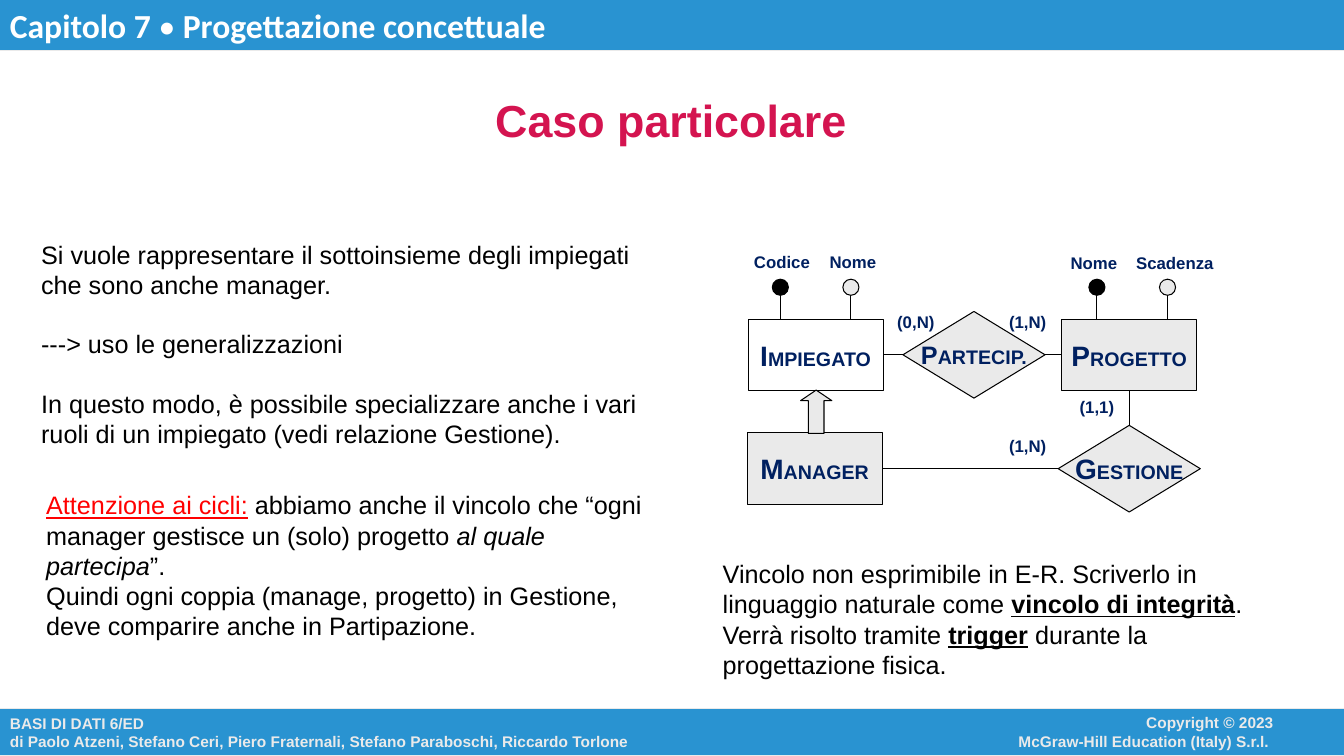
from pptx import Presentation
from pptx.dml.color import RGBColor
from pptx.enum.shapes import MSO_CONNECTOR, MSO_SHAPE
from pptx.enum.text import MSO_ANCHOR, PP_ALIGN
from pptx.oxml.ns import qn
from pptx.util import Inches, Pt
from lxml.etree import SubElement

THEME = {
    "blue": "2993D1", "gray": "EAEAEA", "white": "FFFFFF", "black": "000000",
    "navy": "002060", "pink": "D41450", "red": "FF0000",
    "body": 18, "title": 32, "header": 24, "footer": 11,
    "label": 12, "initial": 20, "small": 18, "caps": 14,
    "line": 0.75, "gap": 21, "font": "Arial", "head_font": "Calibri",
}

HEADER = [[("Capitolo 7 ", "b"), ("•", ""), (" Progettazione concettuale", "b")]]
TITLE = [[("Caso particolare", "b")]]
AUTHORS = [
    [("BASI DI DATI 6/ED", "b")],
    [("di Paolo Atzeni, Stefano Ceri, Piero Fraternali, Stefano Paraboschi, Riccardo Torlone", "b")],
]
RIGHTS = [
    [("Copyright © 2023", "b")],
    [("McGraw-Hill Education (Italy) S.r.l. ", "b")],
]
INTRO = [
    [("Si vuole rappresentare il sottoinsieme degli impiegati che sono anche manager.", "")],
    [("---> uso le generalizzazioni", "")],
    [("In questo modo, è possibile specializzare anche i vari ruoli di un impiegato (vedi relazione Gestione).", "")],
]
CYCLES = [
    [("Attenzione ai cicli:", "ur"),
     (" abbiamo anche il vincolo che “ogni manager gestisce un (solo) progetto ", ""),
     ("al quale partecipa", "i"), ("”.", "")],
    [("Quindi ogni coppia (manage, progetto) in Gestione, deve comparire anche in Partipazione.", "")],
]
RULE = [
    [("Vincolo non esprimibile in E-R. Scriverlo in linguaggio naturale come ", ""),
     ("vincolo di integrità", "bu"), (".", "")],
    [("Verrà risolto tramite ", ""), ("trigger", "bu"),
     (" durante la progettazione fisica.", "")],
]

BOX, RHOMB = (1.34, 0.71), (1.41, 0.86)
UPPER, LOWER = 3.52, 4.65
NODES = {
    "IMPIEGATO": (MSO_SHAPE.RECTANGLE, 8.09, UPPER, BOX, None, "initial"),
    "PROGETTO": (MSO_SHAPE.RECTANGLE, 11.2, UPPER, BOX, "gray", "initial"),
    "MANAGER": (MSO_SHAPE.RECTANGLE, 8.08, LOWER, BOX, "gray", "initial"),
    "PARTECIP.": (MSO_SHAPE.DIAMOND, 9.66, UPPER, RHOMB, "gray", "small"),
    "GESTIONE": (MSO_SHAPE.DIAMOND, 11.2, LOWER, RHOMB, "gray", "initial"),
}
TOP, LEFT, BOTTOM, RIGHT = range(4)
LINKS = [
    ("IMPIEGATO", RIGHT, "PARTECIP.", LEFT),
    ("PARTECIP.", RIGHT, "PROGETTO", LEFT),
    ("PROGETTO", BOTTOM, "GESTIONE", TOP),
    ("GESTIONE", LEFT, "MANAGER", RIGHT),
]
COUNTS = [
    ("(0,N)", 8.8, 3.04, 0.57),
    ("(1,N)", 9.91, 3.04, 0.57),
    ("(1,1)", 10.61, 3.89, 0.54),
    ("(1,N)", 9.91, 4.27, 0.57),
]
FIELDS = [
    ("Codice", 7.38, 2.45, 0.75, 7.74, "black"),
    ("Nome", 8.13, 2.45, 0.66, 8.44, "gray"),
    ("Nome", 10.52, 2.46, 0.66, 10.88, "black"),
    ("Scadenza", 11.17, 2.46, 0.97, 11.58, "gray"),
]
SLACK = 0.08
DOT, DOT_TOP, STEM_END = 0.16, 2.77, 3.17


def color(name):
    return RGBColor.from_string(THEME[name])


def write(shape, paras, size, tint="black", font="font", align=PP_ALIGN.LEFT,
          anchor=MSO_ANCHOR.TOP, wrap=True, gap=0):
    frame = shape.text_frame
    frame.word_wrap = wrap
    frame.vertical_anchor = anchor
    for index, runs in enumerate(paras):
        para = frame.add_paragraph() if index else frame.paragraphs[0]
        para.alignment = align
        if index and gap:
            para.space_before = Pt(gap)
        for text, marks, *own in runs:
            run = para.add_run()
            run.text = text
            run.font.name = THEME[font]
            run.font.size = Pt(own[0] if own else size)
            run.font.bold = "b" in marks
            run.font.italic = "i" in marks
            run.font.underline = "u" in marks
            run.font.color.rgb = color("red" if "r" in marks else tint)


def add_text(slide, area, paras, size, **style):
    box = slide.shapes.add_textbox(*map(Inches, area))
    write(box, paras, size, **style)


def add_form(slide, kind, area, fill, edge="black", width=THEME["line"]):
    form = slide.shapes.add_shape(kind, *map(Inches, area))
    form.shadow.inherit = False
    if fill:
        form.fill.solid()
        form.fill.fore_color.rgb = color(fill)
    else:
        form.fill.background()
    form.line.color.rgb = color(edge)
    form.line.width = Pt(width)
    return form


def add_line(slide, start=(0, 0), end=(0, 0)):
    line = slide.shapes.add_connector(MSO_CONNECTOR.STRAIGHT, *map(Inches, start + end))
    line.line.color.rgb = color("black")
    line.line.width = Pt(THEME["line"])
    SubElement(line._element.spPr, qn("a:effectLst"))
    return line


def add_label(slide, text, left, top, width):
    add_text(slide, (left, top, width + SLACK, 0.3), [[(text, "b")]],
             THEME["label"], tint="navy", wrap=False)


def draw_bands(slide):
    foot = add_form(slide, MSO_SHAPE.RECTANGLE, (0, 7.03, 13.34, 0.47), "blue", "gray")
    write(foot, AUTHORS, THEME["footer"], tint="gray", anchor=MSO_ANCHOR.MIDDLE)
    add_text(slide, (8.89, 7.03, 3.84, 0.46), RIGHTS, THEME["footer"],
             tint="gray", align=PP_ALIGN.RIGHT)
    head = add_form(slide, MSO_SHAPE.RECTANGLE, (0, 0, 13.34, 0.5), "blue", "gray", 0)
    write(head, HEADER, THEME["header"], tint="white", font="head_font")


def draw_schema(slide):
    nodes = {}
    for name, (kind, mid_x, mid_y, (wide, high), fill, initial) in NODES.items():
        area = (mid_x - wide / 2, mid_y - high / 2, wide, high)
        node = add_form(slide, kind, area, fill)
        runs = [(name[0], "b", THEME[initial]), (name[1:], "b")]
        write(node, [runs], THEME["caps"], tint="navy", align=PP_ALIGN.CENTER,
              anchor=MSO_ANCHOR.MIDDLE, wrap=False)
        nodes[name] = node
    for first, out, second, into in LINKS:
        line = add_line(slide)
        line.begin_connect(nodes[first], out)
        line.end_connect(nodes[second], into)
    arrow = add_form(slide, MSO_SHAPE.UP_ARROW, (7.94, 3.87, 0.31, 0.43), "gray")
    arrow.adjustments[1] = 0.34
    for count in COUNTS:
        add_label(slide, *count)
    for text, left, top, width, center, fill in FIELDS:
        add_label(slide, text, left, top, width)
        add_line(slide, (center, DOT_TOP + DOT / 2), (center, STEM_END))
        add_form(slide, MSO_SHAPE.OVAL, (center - DOT / 2, DOT_TOP, DOT, DOT), fill)


def main():
    deck = Presentation()
    deck.slide_width, deck.slide_height = Inches(13.33), Inches(7.5)
    slide = deck.slides.add_slide(deck.slide_layouts[6])
    draw_bands(slide)
    add_text(slide, (1.55, 0.99, 10.21, 0.39), TITLE, THEME["title"], tint="pink",
             align=PP_ALIGN.CENTER, anchor=MSO_ANCHOR.MIDDLE)
    draw_schema(slide)
    add_text(slide, (0.31, 2.32, 6.13, 2.15), INTRO, THEME["body"], gap=THEME["gap"])
    add_text(slide, (0.36, 4.81, 6.31, 1.78), CYCLES, THEME["body"])
    add_text(slide, (7.07, 5.49, 5.57, 1.23), RULE, THEME["body"])
    deck.save("out.pptx")


if __name__ == "__main__":
    main()
